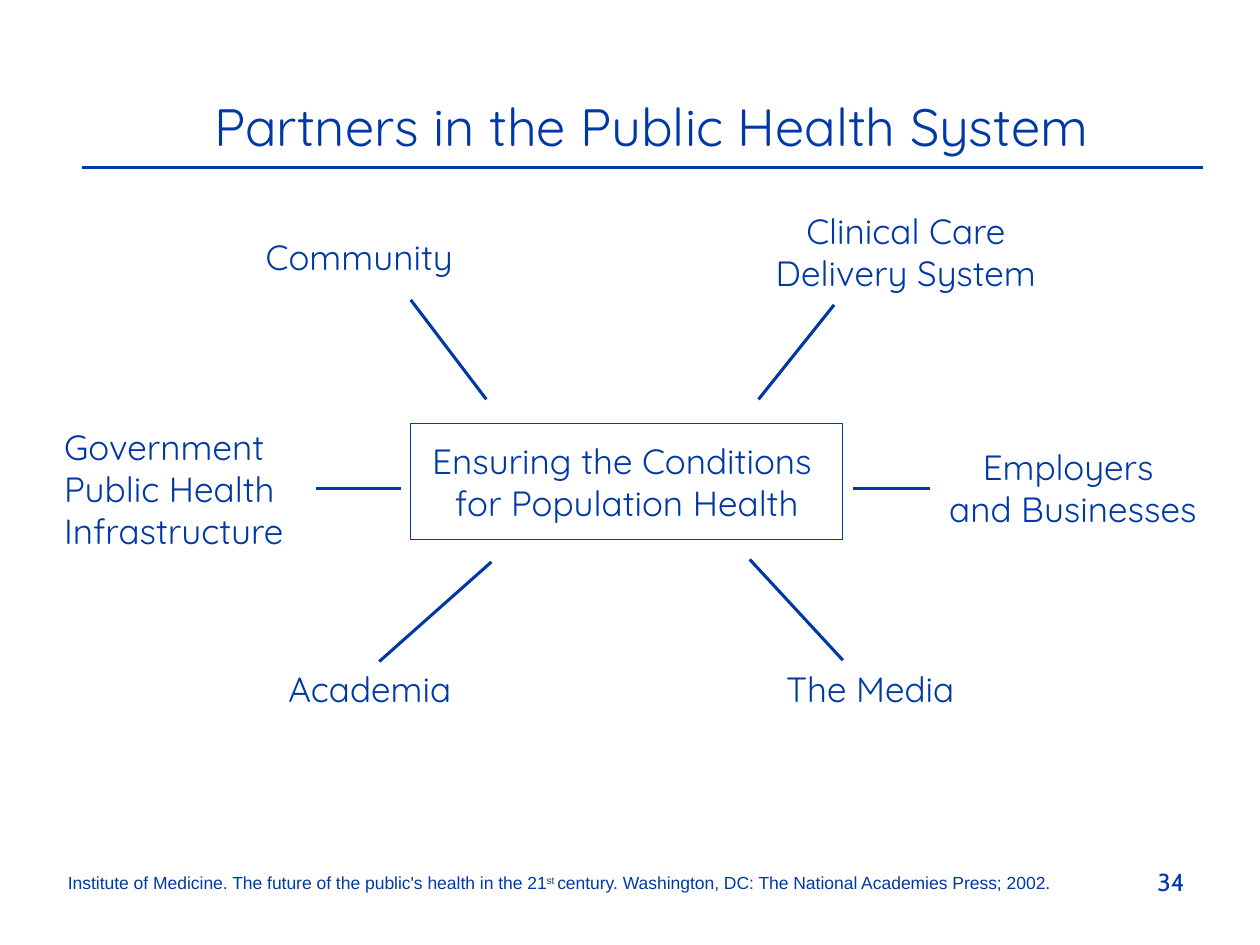
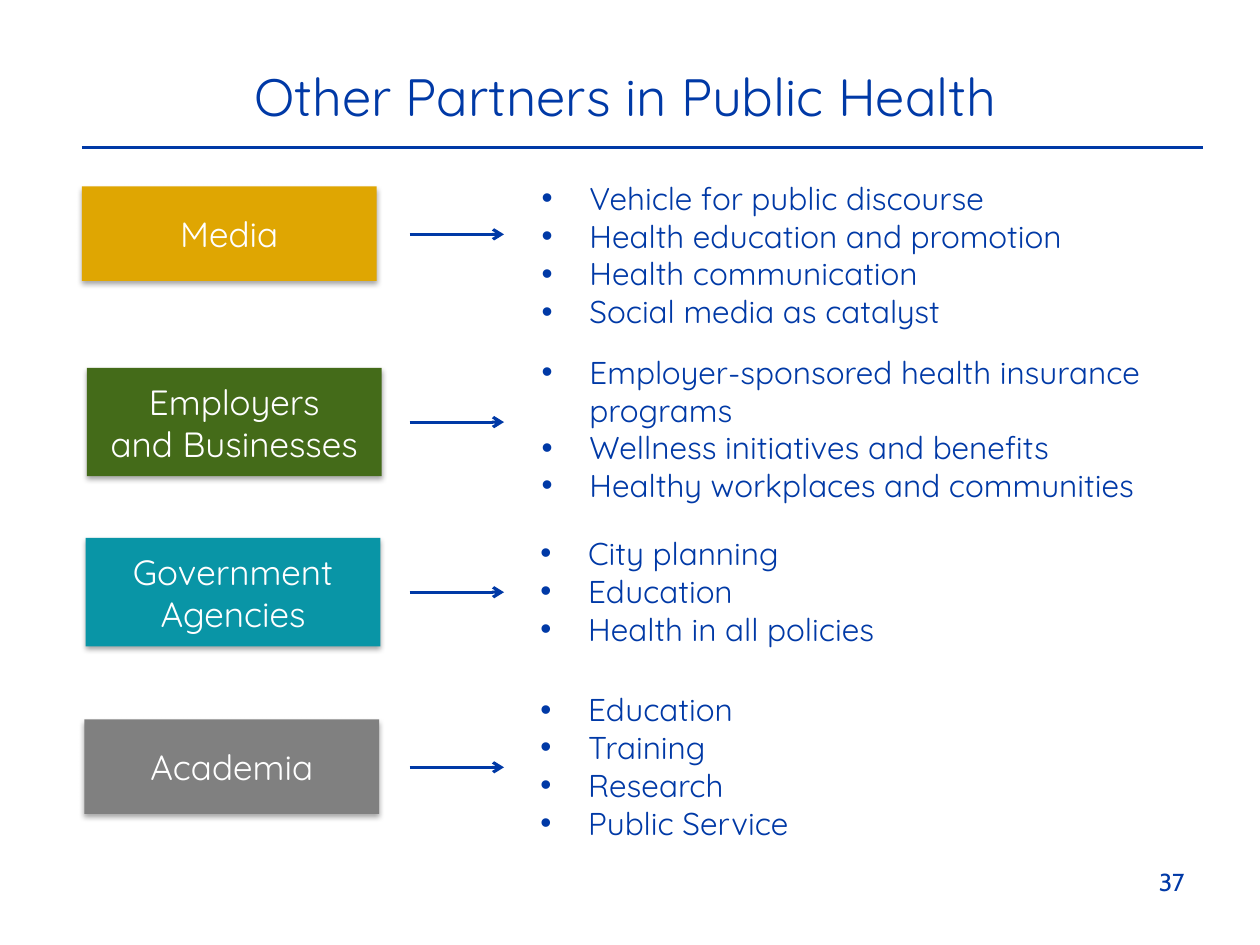
from lxml import etree
from pptx import Presentation
from pptx.dml.color import RGBColor
from pptx.enum.shapes import MSO_CONNECTOR, MSO_SHAPE
from pptx.enum.text import MSO_ANCHOR, MSO_AUTO_SIZE, PP_ALIGN
from pptx.oxml.ns import qn
from pptx.util import Pt

PX = 9144  # 100 px to the inch
BLUE, WHITE = "0039A6", "FFFFFF"
colour = RGBColor.from_string


def write(frame, paragraphs, size, ink=BLUE, font="Quicksand", align=PP_ALIGN.LEFT):
    """Fill a text frame; a line feed inside a paragraph is a line break."""
    for index, wording in enumerate(paragraphs):
        paragraph = frame.paragraphs[0] if index == 0 else frame.add_paragraph()
        paragraph.alignment = align
        for number, line in enumerate(wording.split("\n")):
            if number:
                paragraph.add_line_break()
            run = paragraph.add_run()
            run.text = line
            run.font.size, run.font.name = Pt(size), font
            run.font.color.rgb = colour(ink)


def draw_line(slide, x1, y1, x2, y2, arrow=False):
    line = slide.shapes.add_connector(
        MSO_CONNECTOR.STRAIGHT, x1 * PX, y1 * PX, x2 * PX, y2 * PX)
    line.line.color.rgb = colour(BLUE)
    line.line.width = Pt(1.75)
    properties = line._element.spPr
    if arrow:
        etree.SubElement(properties.find(qn("a:ln")), qn("a:tailEnd"), type="arrow")
    etree.SubElement(properties, qn("a:effectLst"))


deck = Presentation()
deck.slide_width, deck.slide_height = 1000 * PX, 750 * PX

# Shared parts: title, rule below it, page number
slides = []
for heading, title_box, rule_y, page in [
    ("Partners in the Public Health System", (71, 70, 892, 61), 133, "34"),
    ("Other Partners in Public Health", (52, 46, 889, 61), 117, "37"),
]:
    slide = deck.slides.add_slide(deck.slide_layouts[5])
    title = slide.shapes.title
    title.left, title.top, title.width, title.height = (v * PX for v in title_box)
    title.text_frame.auto_size = MSO_AUTO_SIZE.NONE
    title.text_frame.vertical_anchor = MSO_ANCHOR.TOP
    write(title.text_frame, [heading], 30, align=PP_ALIGN.CENTER)
    draw_line(slide, 65, rule_y, 955, rule_y)
    page_number = slide.shapes.add_textbox(717 * PX, 683 * PX, 233 * PX, 52 * PX)
    page_number.text_frame.word_wrap = True
    write(page_number.text_frame, [page], 14, font="Cabin", align=PP_ALIGN.RIGHT)
    slides.append(slide)
system_slide, others_slide = slides

# Central aim of the public health system
aim = system_slide.shapes.add_shape(
    MSO_SHAPE.RECTANGLE, 326 * PX, 336 * PX, 343 * PX, 92 * PX)
aim.shadow.inherit = False
aim.fill.solid()
aim.fill.fore_color.rgb = colour(WHITE)
aim.line.color.rgb = colour(BLUE)
aim.line.width = Pt(0.75)
aim.text_frame.word_wrap = False
aim.text_frame.vertical_anchor = MSO_ANCHOR.MIDDLE
write(aim.text_frame, ["Ensuring the Conditions \nfor Population Health"], 20,
      align=PP_ALIGN.CENTER)

# Partners around it, each with its spoke
for partner, box, align, spoke in [
    ("Community", (201, 182, 178, 44), PP_ALIGN.LEFT, (326, 238, 386, 317)),
    ("Clinical Care\nDelivery System", (604, 161, 230, 77), PP_ALIGN.CENTER,
     (662, 242, 602, 317)),
    ("Government\nPublic Health\nInfrastructure", (41, 333, 199, 111), PP_ALIGN.LEFT,
     (318, 388, 251, 388)),
    ("Employers \nand Businesses", (742, 349, 219, 77), PP_ALIGN.CENTER,
     (738, 388, 677, 388)),
    ("Academia", (219, 525, 167, 44), PP_ALIGN.LEFT, (390, 446, 301, 525)),
    ("The Media", (614, 525, 163, 44), PP_ALIGN.LEFT, (595, 444, 669, 524)),
]:
    label = system_slide.shapes.add_textbox(*(v * PX for v in box))
    label.text_frame.word_wrap = False
    label.text_frame.auto_size = MSO_AUTO_SIZE.SHAPE_TO_FIT_TEXT
    write(label.text_frame, [partner], 20, align=align)
    draw_line(system_slide, *spoke)

# Citation
citation = system_slide.shapes.add_textbox(44 * PX, 687 * PX, 852 * PX, 27 * PX)
citation.text_frame.word_wrap = True
for wording, baseline in [
    ("Institute of Medicine. The future of the public's health in the 21", 0),
    ("st ", 30000),
    ("century. Washington, DC: The National Academies Press; 2002.", 0),
]:
    run = citation.text_frame.paragraphs[0].add_run()
    run.text = wording
    run.font.size, run.font.name = Pt(10), "Arial"
    run.font.color.rgb = colour(BLUE)
    if baseline:
        run.font._element.set("baseline", str(baseline))

# Other partners: coloured box, arrow, contributions
for partner, fill, box, arrow_y, roles_box, roles in [
    ("Media", "DFA602", (65, 148, 234, 75), 186, (420, 137, 483, 131),
     ["Vehicle for public discourse", "Health education and promotion",
      "Health communication", "Social media as catalyst"]),
    ("Employers\nand Businesses", "446B19", (69, 292, 234, 86), 335,
     (420, 275, 529, 131),
     ["Employer-sponsored health insurance programs",
      "Wellness initiatives and benefits", "Healthy workplaces and communities"]),
    ("Government Agencies", "0995A6", (68, 427, 234, 86), 470, (419, 419, 314, 101),
     ["City planning", "Education", "Health in all policies"]),
    ("Academia", "808080", (67, 571, 234, 75), 609, (419, 543, 265, 131),
     ["Education", "Training", "Research", "Public Service"]),
]:
    partner_box = others_slide.shapes.add_shape(
        MSO_SHAPE.RECTANGLE, *(v * PX for v in box))
    partner_box.fill.solid()
    partner_box.fill.fore_color.rgb = colour(fill)
    partner_box.line.fill.background()
    partner_box.shadow.inherit = False
    effects = partner_box._element.spPr.find(qn("a:effectLst"))
    shadow = etree.SubElement(effects, qn("a:outerShdw"), blurRad="40000",
                              dist="23000", dir="5400000", rotWithShape="0")
    black = etree.SubElement(shadow, qn("a:srgbClr"), val="000000")
    etree.SubElement(black, qn("a:alpha"), val="35000")
    partner_box.text_frame.word_wrap = True
    partner_box.text_frame.vertical_anchor = MSO_ANCHOR.MIDDLE
    write(partner_box.text_frame, [partner], 20, ink=WHITE, align=PP_ALIGN.CENTER)

    draw_line(others_slide, 325, arrow_y, 400, arrow_y, arrow=True)

    role_list = others_slide.shapes.add_textbox(*(v * PX for v in roles_box))
    role_list.text_frame.word_wrap = True
    write(role_list.text_frame, roles, 18)
    for paragraph in role_list.text_frame.paragraphs:
        layout = paragraph._p.get_or_add_pPr()
        layout.set("marL", str(38 * PX))
        layout.set("indent", str(-38 * PX))
        bullet_colour = etree.SubElement(layout, qn("a:buClr"))
        etree.SubElement(bullet_colour, qn("a:srgbClr"), val=BLUE)
        etree.SubElement(layout, qn("a:buFont"), typeface="Arial")
        etree.SubElement(layout, qn("a:buChar"), char="•")

deck.save("out.pptx")
